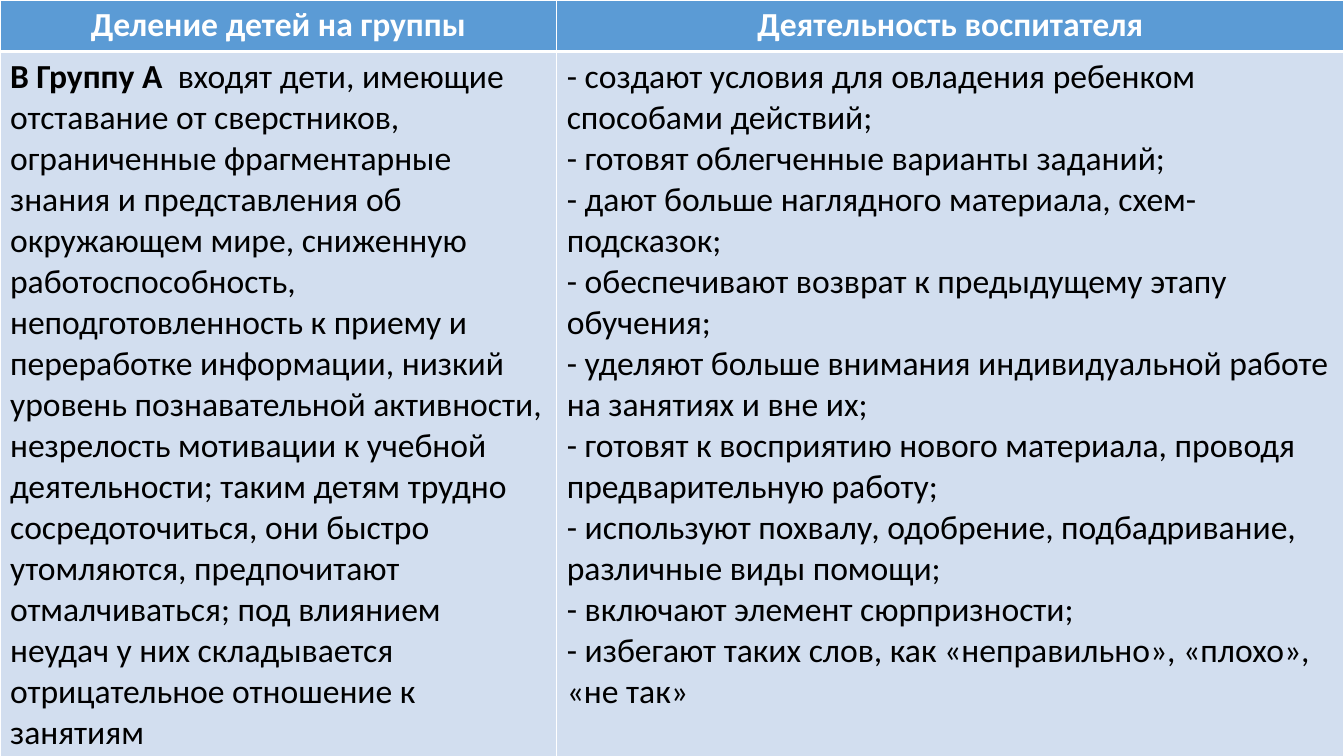
"""Build a slide with a table on dividing children into groups and the educator's work."""
from dataclasses import dataclass

from lxml import etree
from pptx import Presentation
from pptx.dml.color import RGBColor
from pptx.enum import text
from pptx.oxml import ns
from pptx.util import Cm, Pt

COLUMN_WIDTHS = (14.03, 19.84)
THIN, THICK = 1, 3
WHITE, BLACK = "FFFFFF", "000000"
HEADER_BLUE, BODY_BLUE, PALE_BLUE = "5B9BD5", "D2DEEF", "EAEFF7"


@dataclass(frozen=True)
class Phrase:
    wording: str
    bold: bool = False


@dataclass(frozen=True)
class RowStyle:
    height: float
    fill: str
    ink: str = BLACK
    alignment: text.PP_ALIGN = text.PP_ALIGN.LEFT
    top: int = THIN
    bottom: int = THIN


HEADER = RowStyle(1.3, HEADER_BLUE, WHITE, text.PP_ALIGN.CENTER, bottom=THICK)
BODY = RowStyle(17.93, BODY_BLUE, top=THICK)
SPARE_PALE = RowStyle(1.04, PALE_BLUE)
SPARE_BLUE = RowStyle(1.04, BODY_BLUE)

GROUP_A = [
    Phrase("В Группу А", bold=True),
    Phrase(
        "  входят дети, имеющие отставание от сверстников, ограниченные "
        "фрагментарные знания и представления об окружающем мире, сниженную "
        "работоспособность, неподготовленность к приему и переработке информации, "
        "низкий уровень познавательной активности, незрелость мотивации к учебной "
        "деятельности; таким детям трудно сосредоточиться, они быстро утомляются, "
        "предпочитают отмалчиваться; под влиянием неудач у них складывается "
        "отрицательное отношение к занятиям"
    ),
]
EDUCATOR_ACTIONS = [
    "- создают условия для овладения ребенком способами действий;",
    "- готовят облегченные варианты заданий;",
    "- дают больше наглядного материала, схем-подсказок;",
    "- обеспечивают возврат к предыдущему этапу обучения;",
    "- уделяют больше внимания индивидуальной работе на занятиях и вне их;",
    "- готовят к восприятию нового материала, проводя предварительную работу;",
    "- используют похвалу, одобрение, подбадривание, различные виды помощи;",
    "- включают элемент сюрпризности;",
    "- избегают таких слов, как «неправильно», «плохо», «не так»",
]
ROWS = [
    (HEADER, [
        [[Phrase("Деление детей на группы", bold=True)]],
        [[Phrase("Деятельность воспитателя", bold=True)]],
    ]),
    (BODY, [[GROUP_A], [[Phrase(action)] for action in EDUCATOR_ACTIONS]]),
    (SPARE_PALE, [[], []]),
    (SPARE_BLUE, [[], []]),
]


def color(value: str) -> RGBColor:
    return RGBColor.from_string(value)


def draw_borders(cell, style: RowStyle) -> None:
    properties = cell._tc.get_or_add_tcPr()
    sides = {"lnL": THIN, "lnR": THIN, "lnT": style.top, "lnB": style.bottom}
    for position, (side, width) in enumerate(sides.items()):
        border = etree.Element(ns.qn(f"a:{side}"), w=str(Pt(width)))
        solid = etree.SubElement(border, ns.qn("a:solidFill"))
        etree.SubElement(solid, ns.qn("a:srgbClr"), val=WHITE)
        properties.insert(position, border)


def fill_cell(cell, paragraphs: list[list[Phrase]], style: RowStyle) -> None:
    cell.fill.solid()
    cell.fill.fore_color.rgb = color(style.fill)
    draw_borders(cell, style)
    frame = cell.text_frame
    for index, phrases in enumerate(paragraphs):
        paragraph = frame.add_paragraph() if index else frame.paragraphs[0]
        paragraph.alignment = style.alignment
        for phrase in phrases:
            run = paragraph.add_run()
            run.text = phrase.wording
            run.font.name = "Calibri"
            run.font.size = Pt(24)
            run.font.bold = phrase.bold
            run.font.color.rgb = color(style.ink)


def main() -> None:
    deck = Presentation()
    deck.slide_width, deck.slide_height = Cm(33.87), Cm(19.05)
    slide = deck.slides.add_slide(deck.slide_layouts[6])
    groups = slide.shapes.add_table(
        len(ROWS), len(COLUMN_WIDTHS), Cm(0), Cm(0),
        Cm(sum(COLUMN_WIDTHS)), Cm(sum(style.height for style, _ in ROWS)),
    ).table
    groups.horz_banding = False
    for column, width in zip(groups.columns, COLUMN_WIDTHS):
        column.width = Cm(width)
    for row, (style, contents) in zip(groups.rows, ROWS):
        row.height = Cm(style.height)
        for cell, paragraphs in zip(row.cells, contents):
            fill_cell(cell, paragraphs, style)
    deck.save("out.pptx")


if __name__ == "__main__":
    main()
